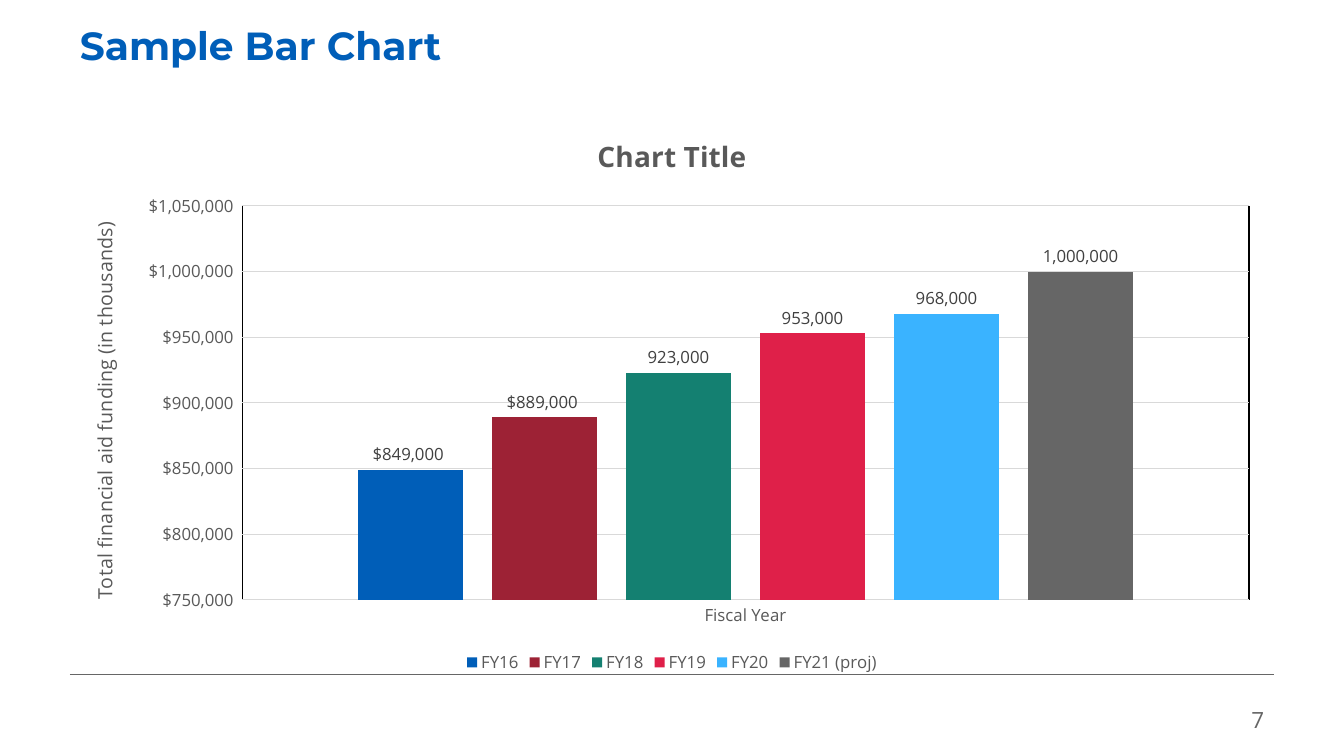
from lxml import etree
from pptx import Presentation
from pptx import util as u
from pptx.chart.data import CategoryChartData
from pptx.dml.color import RGBColor
from pptx.enum import chart as ch, shapes, text
from pptx.oxml import parse_xml
from pptx.oxml.ns import nsdecls, qn

PX = 914400 / 100.8  # EMU per px

BLUE = RGBColor(0x00, 0x5E, 0xB8)
MAROON = RGBColor(0x9D, 0x22, 0x35)
GREEN = RGBColor(0x14, 0x80, 0x71)
RED = RGBColor(0xDF, 0x20, 0x49)
SKY = RGBColor(0x3A, 0xB3, 0xFF)
GRAY = RGBColor(0x66, 0x66, 0x66)
TEXT_GRAY = RGBColor(0x59, 0x59, 0x59)
LABEL_GRAY = RGBColor(0x40, 0x40, 0x40)
GRID_GRAY = RGBColor(0xD9, 0xD9, 0xD9)
BLACK = RGBColor(0, 0, 0)

HEAD_FONT, BODY_FONT = "Montserrat", "Open Sans"
DOLLARS = '"$"#,##0_);[Red]\\("$"#,##0\\)'
PLAIN = "#,##0"

FUNDING = [
    ("FY16", 849000, BLUE, DOLLARS),
    ("FY17", 889000, MAROON, DOLLARS),
    ("FY18", 923000, GREEN, PLAIN),
    ("FY19", 953000, RED, PLAIN),
    ("FY20", 968000, SKY, PLAIN),
    ("FY21 (proj)", 1000000, GRAY, PLAIN),
]


def px(*lengths):
    return [u.Emu(round(n * PX)) for n in lengths]


def style_font(font, size, color, name=BODY_FONT, bold=False):
    font.size, font.name, font.bold = u.Pt(size), name, bold
    font.color.rgb = color


def style_line(line, color, width):
    line.color.rgb = color
    line.width = u.Pt(width)


def add_text(slide, box, words, size, color, align, name=BODY_FONT, bold=False):
    tf = slide.shapes.add_textbox(*px(*box)).text_frame
    tf.word_wrap = True
    tf.vertical_anchor = text.MSO_ANCHOR.MIDDLE
    p = tf.paragraphs[0]
    p.text = words
    p.alignment = align
    style_font(p.runs[0].font, size, color, name, bold)
    return p


def add_heading(slide, box):
    p = add_text(slide, box, "Sample Bar Chart", 28, BLUE,
                 text.PP_ALIGN.LEFT, HEAD_FONT, True)
    p.line_spacing = 0.9


def add_footer(slide, box):
    left, top, width, height = box
    # Rule across the top
    rule = slide.shapes.add_connector(
        shapes.MSO_CONNECTOR.STRAIGHT, *px(left, top, left + width, top))
    style_line(rule.line, GRAY, 0.5)
    etree.SubElement(rule._element.spPr, qn("a:effectLst"))
    # Page number in the right corner
    add_text(slide, (left + width - 101, top + height - 28, 101, 28),
             "7", 16, GRAY, text.PP_ALIGN.RIGHT)


def set_title(owner, words, size, bold=False):
    p = owner.text_frame.paragraphs[0]
    p.text = words
    style_font(p.runs[0].font, size, TEXT_GRAY, bold=bold)


def place_plot(chart, box, plot_box):
    """Fix the inner plot area, given in px relative to the chart box."""
    area = chart._chartSpace.chart.plotArea
    for old in area.findall(qn("c:layout")):
        area.remove(old)
    shares = zip("xywh", plot_box, box[2:] * 2)
    sizes = "".join(f'<c:{k} val="{n / full:.4f}"/>' for k, n, full in shares)
    area.insert(0, parse_xml(
        f'<c:layout {nsdecls("c")}><c:manualLayout><c:layoutTarget val="inner"/>'
        f'<c:xMode val="edge"/><c:yMode val="edge"/>{sizes}'
        '</c:manualLayout></c:layout>'))


def add_funding_chart(slide, box):
    data = CategoryChartData(number_format=PLAIN)
    data.categories = ["Fiscal Year"]
    for name, value, _, _ in FUNDING:
        data.add_series(name, [value])
    chart = slide.shapes.add_chart(
        ch.XL_CHART_TYPE.COLUMN_CLUSTERED, *px(*box), data).chart
    style_font(chart.font, 10, BLACK)
    chart.has_title = True
    set_title(chart.chart_title, "Chart Title", 20, True)
    chart.chart_title.include_in_layout = False
    place_plot(chart, box, (172, 94, 1007, 394))

    # Legend
    chart.has_legend = True
    chart.legend.position = ch.XL_LEGEND_POSITION.BOTTOM
    chart.legend.include_in_layout = False
    style_font(chart.legend.font, 12, TEXT_GRAY)

    # Axes
    cat, val = chart.category_axis, chart.value_axis
    for axis, grid_color in ((cat, BLACK), (val, GRID_GRAY)):
        axis.major_tick_mark = axis.minor_tick_mark = ch.XL_TICK_MARK.NONE
        axis.has_major_gridlines = True
        style_line(axis.major_gridlines.format.line, grid_color, 0.75)
        style_font(axis.tick_labels.font, 12, TEXT_GRAY)
    style_line(cat.format.line, GRID_GRAY, 0.75)
    val.format.line.fill.background()
    val.minimum_scale, val.maximum_scale, val.major_unit = 750000, 1050000, 50000
    val.tick_labels.number_format = DOLLARS
    val.tick_labels.number_format_is_linked = False
    set_title(val.axis_title, "Total financial aid funding (in thousands)", 14)

    # Columns and their labels
    plot = chart.plots[0]
    plot.gap_width, plot.overlap, plot.vary_by_categories = 219, -27, False
    for series, (_, _, color, number_format) in zip(plot.series, FUNDING):
        series.format.fill.solid()
        series.format.fill.fore_color.rgb = color
        series.invert_if_negative = False
        labels = series.data_labels
        labels.show_value = True
        labels.position = ch.XL_LABEL_POSITION.OUTSIDE_END
        labels.number_format = number_format
        labels.number_format_is_linked = False
        style_font(labels.font, 12, LABEL_GRAY)


def main():
    prs = Presentation()
    prs.slide_width, prs.slide_height = px(1344, 756)
    slide = prs.slides.add_slide(prs.slide_layouts[6])
    add_footer(slide, (70, 674, 1204, 60))
    add_funding_chart(slide, (70, 112, 1204, 566))
    add_heading(slide, (70, 6, 1204, 84))
    prs.save("out.pptx")


if __name__ == "__main__":
    main()
